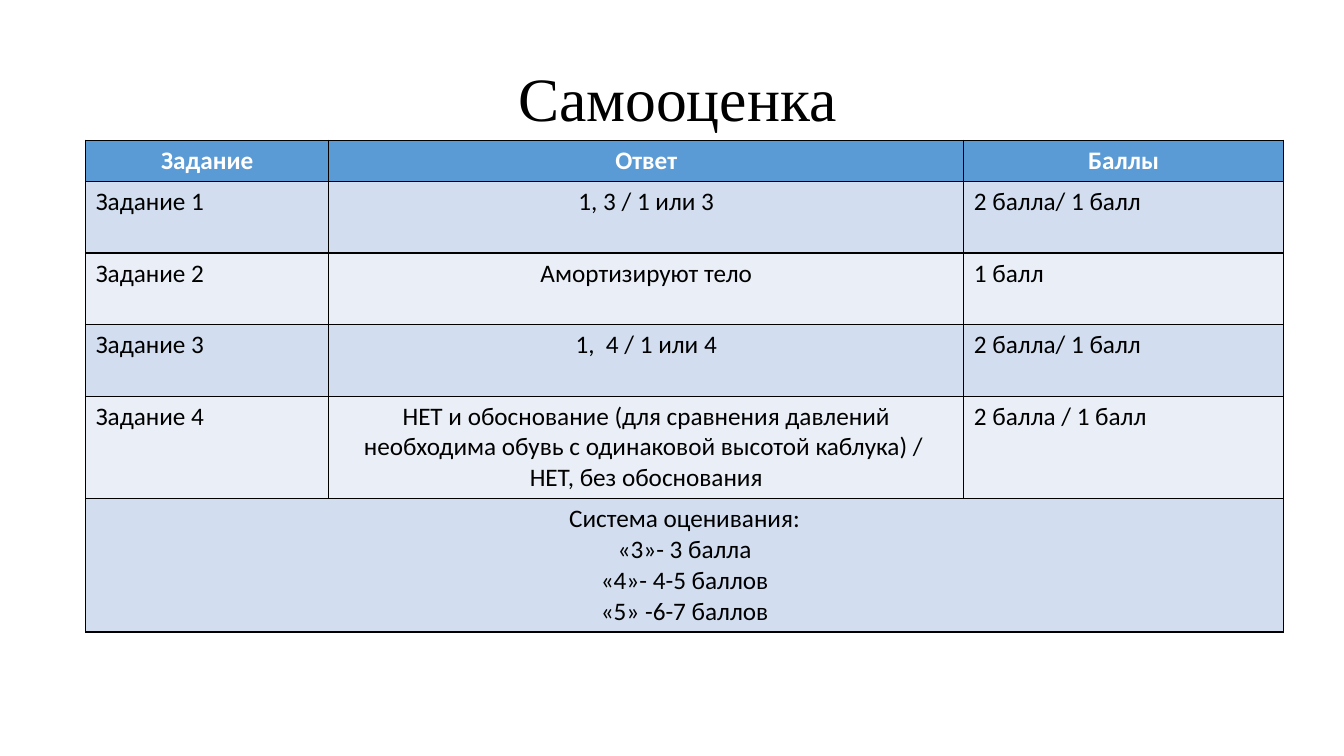
import pptx
import pptx.util
import pptx.dml.color
import pptx.enum.text
import lxml.etree

Inches = pptx.util.Inches
Pt = pptx.util.Pt
ALIGN = pptx.enum.text.PP_ALIGN
NS = "http://schemas.openxmlformats.org/drawingml/2006/main"

HEAD = ["Задание", "Ответ", "Баллы"]
TASKS = [
    ["Задание 1", "1, 3 / 1 или 3", "2 балла/ 1 балл"],
    ["Задание 2", "Амортизируют тело", "1 балл"],
    ["Задание 3", "1,  4 / 1 или 4", "2 балла/ 1 балл"],
    ["Задание 4",
     "НЕТ и обоснование (для сравнения давлений необходима обувь "
     "с одинаковой высотой каблука) / \nНЕТ, без обоснования",
     "2 балла / 1 балл"],
]
SCALE = "Система оценивания:\n«3»- 3 балла\n«4»- 4-5 баллов\n«5» -6-7 баллов"
WIDTHS = [2.41, 6.3, 3.17]
HEIGHTS = [0.41, 0.71, 0.71, 0.71, 1.02, 1.32]
BANDS = ["D2DEEF", "EAEFF7"]


def color(code):
    """Turn a hex string into a colour."""
    return pptx.dml.color.RGBColor.from_string(code)


def style(par, font, size, code, align, bold=False):
    """Set the look of one paragraph."""
    par.alignment = align
    par.font.name = font
    par.font.size = Pt(size)
    par.font.bold = bold
    par.font.color.rgb = color(code)


def border(cell, code="000000"):
    """Draw a thin line on all four sides of a cell."""
    props = cell._tc.get_or_add_tcPr()
    for side in ("lnL", "lnR", "lnT", "lnB"):
        line = lxml.etree.SubElement(props, f"{{{NS}}}{side}", w=str(Pt(1)))
        fill = lxml.etree.SubElement(line, f"{{{NS}}}solidFill")
        lxml.etree.SubElement(fill, f"{{{NS}}}srgbClr", val=code)


def paint(cell, text, back, code, align, bold):
    """Fill one cell with its text and colours."""
    border(cell)
    cell.fill.solid()
    cell.fill.fore_color.rgb = color(back)
    cell.text = text
    for par in cell.text_frame.paragraphs:
        style(par, "Calibri", 18, code, align, bold)


def heading(slide, text, left, top, width, height):
    """Place the slide title in the given box."""
    title = slide.shapes.title
    title.left, title.top = Inches(left), Inches(top)
    title.width, title.height = Inches(width), Inches(height)
    frame = title.text_frame
    frame.text = text
    frame.auto_size = pptx.enum.text.MSO_AUTO_SIZE.NONE
    frame.vertical_anchor = pptx.enum.text.MSO_ANCHOR.MIDDLE
    par = frame.paragraphs[0]
    par.line_spacing = 0.9
    style(par, "Times New Roman", 44, "000000", ALIGN.CENTER)


def scores(slide, left, top, width, height):
    """Place the table of answers and points in the given box."""
    rows = [HEAD] + TASKS + [[SCALE, "", ""]]
    table = slide.shapes.add_table(
        len(rows), len(HEAD), Inches(left), Inches(top),
        Inches(width), Inches(height)).table
    for col, part in zip(table.columns, WIDTHS):
        col.width = Inches(width * part / sum(WIDTHS))
    for row, part in zip(table.rows, HEIGHTS):
        row.height = Inches(height * part / sum(HEIGHTS))
    last = len(rows) - 1
    table.cell(last, 0).merge(table.cell(last, len(HEAD) - 1))
    for r, row in enumerate(rows):
        top_row = r == 0
        back = "5B9BD5" if top_row else BANDS[(r - 1) % 2]
        code = "FFFFFF" if top_row else "000000"
        for c, text in enumerate(row):
            mid = r in (0, last) or c == 1
            align = ALIGN.CENTER if mid else ALIGN.LEFT
            paint(table.cell(r, c), text, back, code, align, top_row)


def main():
    """Build the slide and save it."""
    deck = pptx.Presentation()
    deck.slide_width, deck.slide_height = Inches(13.33), Inches(7.5)
    slide = deck.slides.add_slide(deck.slide_layouts.get_by_name("Title Only"))
    heading(slide, "Самооценка", 0.97, 0.28, 11.5, 1.45)
    scores(slide, 0.85, 1.39, sum(WIDTHS), sum(HEIGHTS))
    deck.save("out.pptx")


if __name__ == "__main__":
    main()
